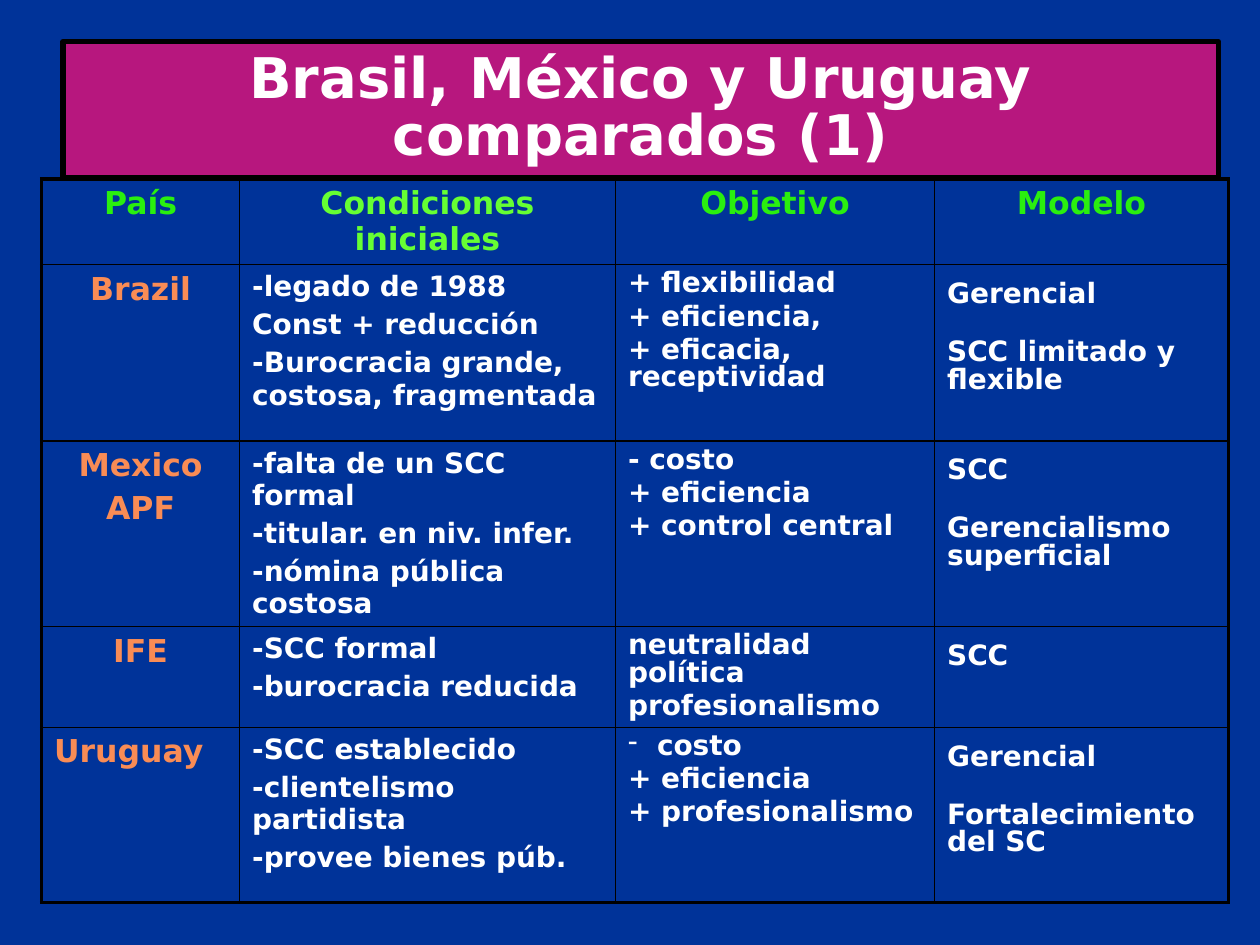
from dataclasses import dataclass

import pptx
import pptx.dml.color
import pptx.enum.shapes
import pptx.enum.text
import pptx.oxml
import pptx.oxml.ns
import pptx.util

Inches = pptx.util.Inches
Pt = pptx.util.Pt
CENTER = pptx.enum.text.PP_ALIGN.CENTER
LEFT = pptx.enum.text.PP_ALIGN.LEFT


@dataclass(frozen=True)
class Theme:
    font: str = "DejaVu Sans"
    background: str = "003399"
    banner: str = "B7177E"
    border: str = "000000"
    text: str = "FFFFFF"
    heading: str = "2AEF0F"
    heading_accent: str = "66FF33"
    country: str = "F98C55"
    title_size: int = 32
    label_size: int = 18
    body_size: int = 16
    outer_border: float = 2.25
    inner_border: float = 1
    tight: float = 0.85
    loose: float = 1.2
    group_gap: int = 17


THEME = Theme()
TITLE = "Brasil, México y Uruguay\vcomparados (1)"
HEADINGS = ["País", "Condiciones iniciales", "Objetivo", "Modelo"]
COUNTRIES = [
    (["Brazil"],
     ["-legado de 1988", "Const + reducción", "-Burocracia grande, costosa, fragmentada"],
     ["+ flexibilidad", "+ eficiencia,", "+ eficacia, receptividad"],
     ["Gerencial", "SCC limitado y flexible"]),
    (["Mexico", "APF"],
     ["-falta de un SCC formal", "-titular. en niv. infer.", "-nómina pública costosa"],
     ["- costo", "+ eficiencia", "+ control central"],
     ["SCC", "Gerencialismo superficial"]),
    (["IFE"],
     ["-SCC formal", "-burocracia reducida"],
     ["neutralidad política", "profesionalismo"],
     ["SCC"]),
    (["Uruguay"],
     ["-SCC establecido", "-clientelismo partidista", "-provee bienes púb."],
     ["costo", "+ eficiencia", "+ profesionalismo"],
     ["Gerencial", "Fortalecimiento del SC"]),
]
COLUMN_WIDTHS = [1.57, 2.98, 2.53, 2.33]
ROW_HEIGHTS = [0.68, 1.4, 1.47, 0.8, 1.39]


def rgb(value):
    return pptx.dml.color.RGBColor.from_string(value)


def format_runs(paragraph, size, color):
    for run in paragraph.runs:
        run.font.name = THEME.font
        run.font.size = Pt(size)
        run.font.bold = True
        run.font.color.rgb = rgb(color)


def write_cell(cell, lines, size, color, alignment=LEFT, spacing=1.0):
    cell.text_frame.text = "\n".join(lines)
    for index, paragraph in enumerate(cell.text_frame.paragraphs):
        paragraph.alignment = alignment
        paragraph.line_spacing = spacing
        paragraph.space_before = Pt(size * 0.2 if index else 0)
        format_runs(paragraph, size, color)


def set_borders(cell, widths):
    properties = cell._tc.get_or_add_tcPr()
    namespace = pptx.oxml.ns.nsdecls("a")
    for side, width in zip("LRTB", widths):
        properties.append(pptx.oxml.parse_xml(
            f'<a:ln{side} {namespace} w="{Pt(width)}"><a:solidFill>'
            f'<a:srgbClr val="{THEME.border}"/></a:solidFill></a:ln{side}>'))


def set_dash_bullet(paragraph, indent):
    properties = paragraph._p.get_or_add_pPr()
    properties.set("marL", str(indent))
    properties.set("indent", str(-indent))
    properties.append(pptx.oxml.parse_xml(
        f'<a:buChar {pptx.oxml.ns.nsdecls("a")} char="-"/>'))


def add_banner(slide, left, top, width, height):
    shape = slide.shapes.add_shape(
        pptx.enum.shapes.MSO_SHAPE.RECTANGLE, left, top, width, height)
    shape.shadow.inherit = False
    shape.fill.solid()
    shape.fill.fore_color.rgb = rgb(THEME.banner)
    shape.line.color.rgb = rgb(THEME.border)
    shape.line.width = Pt(3)
    shape.text_frame.word_wrap = True
    shape.text_frame.vertical_anchor = pptx.enum.text.MSO_ANCHOR.MIDDLE
    shape.text_frame.text = TITLE
    paragraph = shape.text_frame.paragraphs[0]
    paragraph.alignment = CENTER
    paragraph.line_spacing = THEME.tight
    format_runs(paragraph, THEME.title_size, THEME.text)


def fill_heading_row(table):
    for column, heading in enumerate(HEADINGS):
        color = THEME.heading_accent if column == 1 else THEME.heading
        write_cell(table.cell(0, column), [heading], THEME.label_size, color, CENTER)


def fill_country_row(table, row, content):
    country, conditions, goals, model = content
    alignment = LEFT if country == ["Uruguay"] else CENTER
    write_cell(table.cell(row, 0), country, THEME.label_size, THEME.country, alignment)
    write_cell(table.cell(row, 1), conditions, THEME.body_size, THEME.text)
    write_cell(table.cell(row, 2), goals, THEME.body_size, THEME.text, spacing=THEME.tight)
    if goals[0] == "costo":
        set_dash_bullet(table.cell(row, 2).text_frame.paragraphs[0], Inches(0.23))
    write_cell(table.cell(row, 3), model, THEME.body_size, THEME.text, spacing=THEME.loose)
    for paragraph in table.cell(row, 3).text_frame.paragraphs[1:]:
        paragraph.line_spacing = THEME.tight
        paragraph.space_before = Pt(THEME.group_gap)


def add_comparison_table(slide, left, top, width, height):
    rows, columns = len(ROW_HEIGHTS), len(COLUMN_WIDTHS)
    table = slide.shapes.add_table(rows, columns, left, top, width, height).table
    table.first_row = False
    table.horz_banding = False
    for column, share in zip(table.columns, COLUMN_WIDTHS):
        column.width = int(width * share / sum(COLUMN_WIDTHS))
    for row, share in zip(table.rows, ROW_HEIGHTS):
        row.height = int(height * share / sum(ROW_HEIGHTS))
    fill_heading_row(table)
    for row, content in enumerate(COUNTRIES, start=1):
        fill_country_row(table, row, content)
    for row in range(rows):
        for column in range(columns):
            cell = table.cell(row, column)
            on_edge = [column == 0, column == columns - 1, row == 0, row == rows - 1]
            set_borders(cell, [THEME.outer_border if edge else THEME.inner_border
                               for edge in on_edge])
            cell.fill.background()


def main():
    presentation = pptx.Presentation()
    presentation.slide_width = Inches(10)
    presentation.slide_height = Inches(7.5)
    slide = presentation.slides.add_slide(presentation.slide_layouts[6])
    slide.background.fill.solid()
    slide.background.fill.fore_color.rgb = rgb(THEME.background)
    add_banner(slide, Inches(0.5), Inches(0.33), Inches(9.17), Inches(1.08))
    add_comparison_table(slide, Inches(0.33), Inches(1.42), Inches(9.42), Inches(5.74))
    presentation.save("out.pptx")


if __name__ == "__main__":
    main()
